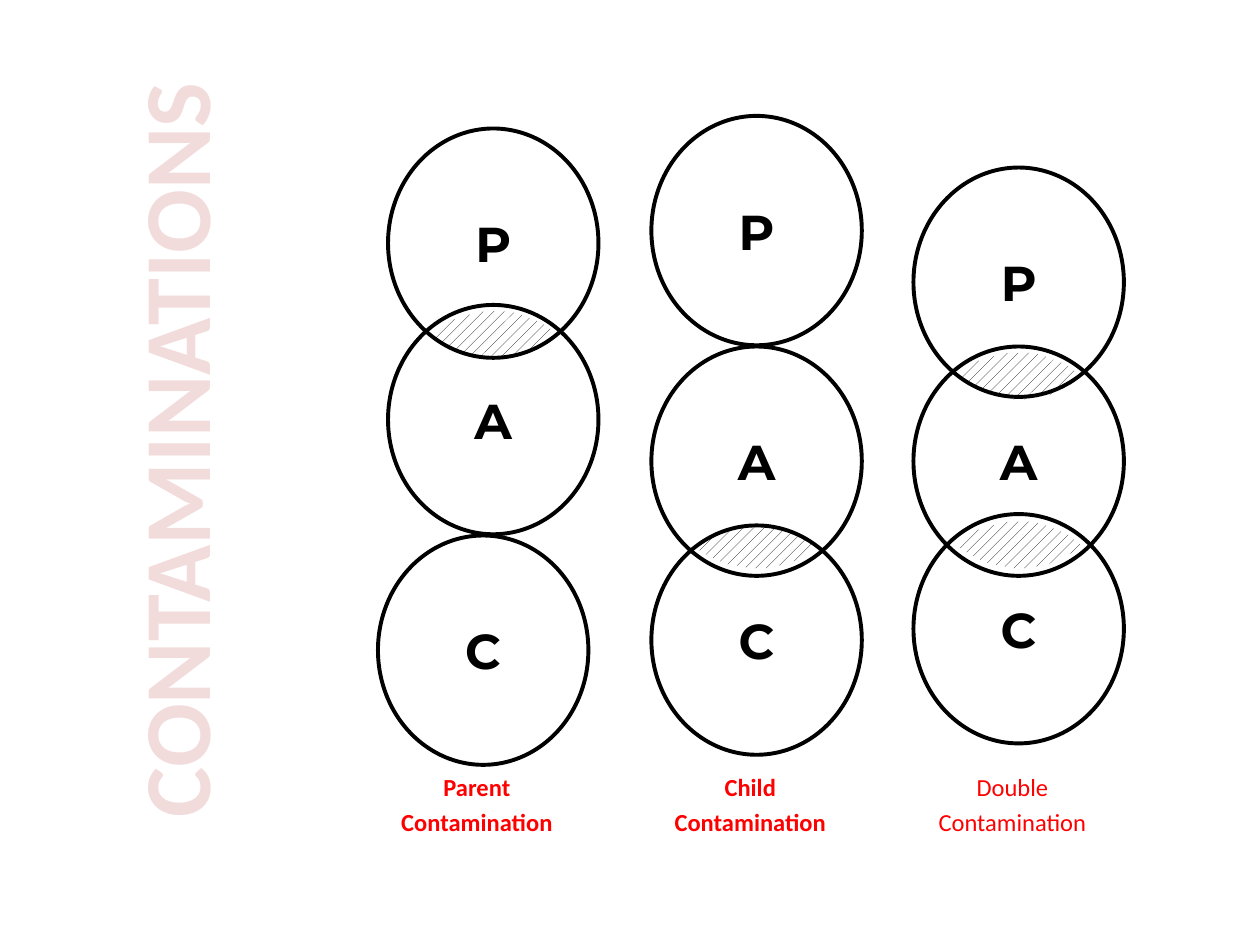
from pptx import Presentation
from pptx.dml.color import RGBColor
from pptx.enum.dml import MSO_PATTERN
from pptx.enum.shapes import MSO_SHAPE
from pptx.enum.text import MSO_ANCHOR, MSO_AUTO_SIZE, PP_ALIGN
from pptx.util import Inches, Pt

ELLIPSE = MSO_SHAPE.OVAL
HATCH = MSO_PATTERN.PERCENT_20
CENTER, MIDDLE, TOP = PP_ALIGN.CENTER, MSO_ANCHOR.MIDDLE, MSO_ANCHOR.TOP
NO_FIT, GROW = MSO_AUTO_SIZE.NONE, MSO_AUTO_SIZE.SHAPE_TO_FIT_TEXT

BLACK = RGBColor(0x00, 0x00, 0x00)
WHITE = RGBColor(0xFF, 0xFF, 0xFF)
RED = RGBColor(0xFF, 0x00, 0x00)
PALE_RED = RGBColor(0xF2, 0xDC, 0xDB)

TITLE_ONLY = 5
CIRCLE_WIDTH, CIRCLE_HEIGHT = 1.67, 1.82
OVERLAP_WIDTH = 1.0
CAPTION_TOP, CAPTION_WIDTH, CAPTION_HEIGHT = 6.08, 1.41, 0.62

# Outline of an overlap, as percentages of its width and height
OVERLAP_OUTLINE = [
    (0, 50), (8, 33), (17, 19), (26, 11), (33, 6), (43, 0), (51, 0),
    (58, 0), (66, 3), (75, 11), (82, 19), (88, 25), (94, 36), (100, 50),
    (94, 64), (88, 75), (82, 81), (74, 92), (67, 94), (60, 100), (52, 100),
    (45, 100), (36, 94), (29, 92), (23, 86), (17, 78), (11, 69), (7, 61),
]

# Each column: circles as (letter, left, top), overlaps as (left, top, height)
COLUMNS = [
    {"caption": "Parent", "caption_left": 3.08, "bold": True,
     "circles": [("P", 3.08, 1.02), ("A", 3.08, 2.42), ("C", 3.0, 4.25)],
     "overlaps": [(3.42, 2.47, 0.37)]},
    {"caption": "Child", "caption_left": 5.25, "bold": True,
     "circles": [("P", 5.17, 0.92), ("A", 5.17, 2.75), ("C", 5.17, 4.17)],
     "overlaps": [(5.5, 4.17, 0.34)]},
    {"caption": "Double", "caption_left": 7.33, "bold": False,
     "circles": [("P", 7.25, 1.33), ("A", 7.25, 2.75), ("C", 7.25, 4.08)],
     "overlaps": [(7.58, 2.8, 0.37), (7.58, 4.14, 0.37)]},
]


def write_text(frame, *lines, font, size, color, bold=True, anchor=MIDDLE,
               fit=NO_FIT, wrap=False, space_before=0.2):
    frame.word_wrap = wrap
    frame.auto_size = fit
    frame.vertical_anchor = anchor
    for number, line in enumerate(lines):
        paragraph = frame.add_paragraph() if number else frame.paragraphs[0]
        paragraph.alignment = CENTER
        paragraph.space_before = Pt(size * space_before)
        run = paragraph.add_run()
        run.text = line
        run.font.name = font
        run.font.size = Pt(size)
        run.font.bold = bold
        run.font.color.rgb = color


class DiagramSlide:
    text_font = "Calibri"
    letter_font = "Montserrat"
    outline_width = Pt(2.25)

    def __init__(self, slide):
        self.slide = slide

    def vertical_title(self, text, center_x, center_y, length, thickness):
        heading = self.slide.shapes.title
        heading.left = Inches(center_x - length / 2)
        heading.top = Inches(center_y - thickness / 2)
        heading.width, heading.height = Inches(length), Inches(thickness)
        heading.rotation = 270
        write_text(heading.text_frame, text, font=self.text_font, size=54,
                   color=PALE_RED, wrap=True, space_before=0)

    def overlap(self, left, top, height):
        points = [(Inches(left + x * OVERLAP_WIDTH / 100),
                   Inches(top + y * height / 100)) for x, y in OVERLAP_OUTLINE]
        builder = self.slide.shapes.build_freeform(*points[0])
        builder.add_line_segments(points[1:], close=True)
        lens = builder.convert_to_shape()
        lens.shadow.inherit = False
        lens.fill.patterned()
        lens.fill.pattern = HATCH
        lens.fill.fore_color.rgb = BLACK
        lens.fill.back_color.rgb = WHITE
        lens.line.fill.background()

    def circle(self, letter, left, top):
        ego_state = self.slide.shapes.add_shape(
            ELLIPSE, Inches(left), Inches(top),
            Inches(CIRCLE_WIDTH), Inches(CIRCLE_HEIGHT))
        ego_state.shadow.inherit = False
        ego_state.fill.background()
        ego_state.line.color.rgb = BLACK
        ego_state.line.width = self.outline_width
        write_text(ego_state.text_frame, letter, font=self.letter_font,
                   size=28, color=BLACK)

    def caption(self, *lines, left, bold):
        label = self.slide.shapes.add_textbox(
            Inches(left), Inches(CAPTION_TOP),
            Inches(CAPTION_WIDTH), Inches(CAPTION_HEIGHT))
        write_text(label.text_frame, *lines, font=self.text_font, size=14,
                   color=RED, bold=bold, anchor=TOP, fit=GROW)


def main():
    presentation = Presentation()
    presentation.slide_width = Inches(10)
    presentation.slide_height = Inches(7.5)
    layout = presentation.slide_layouts[TITLE_ONLY]
    diagram = DiagramSlide(presentation.slides.add_slide(layout))

    # Title reading from bottom to top
    diagram.vertical_title("CONTAMINATIONS", 1.37, 3.57, 6.4, 1)

    # Hatched overlaps lie behind the circles
    for column in COLUMNS:
        for overlap in column["overlaps"]:
            diagram.overlap(*overlap)

    # Circles and captions
    for column in COLUMNS:
        for circle in column["circles"]:
            diagram.circle(*circle)
        diagram.caption(column["caption"], "Contamination",
                        left=column["caption_left"], bold=column["bold"])

    presentation.save("out.pptx")


if __name__ == "__main__":
    main()
